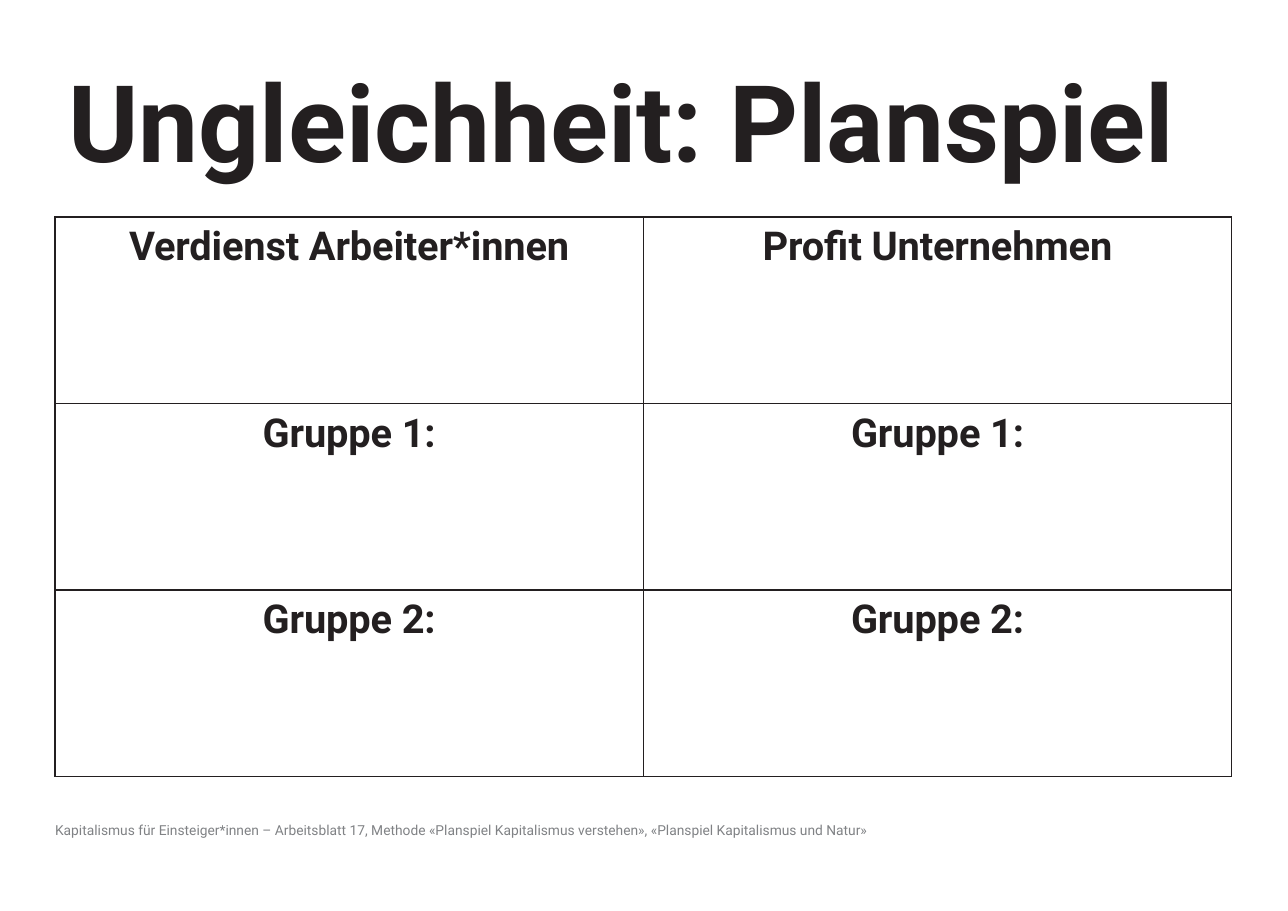
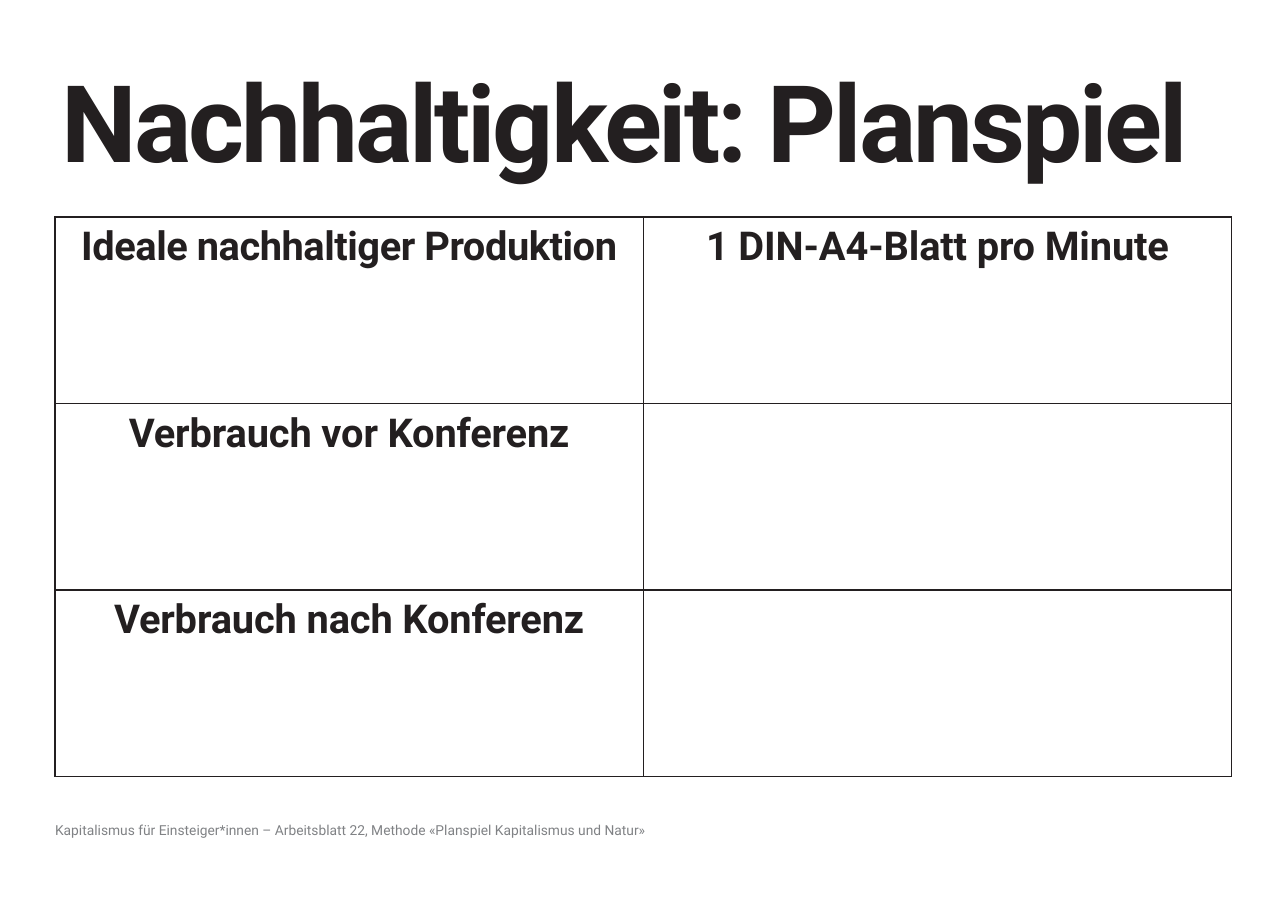
from dataclasses import dataclass

from lxml import etree
from pptx import Presentation, util as u
from pptx.dml.color import RGBColor
from pptx.enum import text
from pptx.oxml.ns import qn


@dataclass(frozen=True)
class Theme:
    font: str = "Roboto"
    ink: str = "231F20"
    grey: str = "808285"
    paper: str = "FFFFFF"
    title: float = 70
    cell: float = 26
    footer: float = 9
    border: float = 1


T = Theme()


def write(tf, words, size, color=T.ink, bold=False, align=text.PP_ALIGN.LEFT,
          before=0, top=0.01, indent=0, spacing=0):
    """Fill a text frame with one formatted paragraph; spacing is in points."""
    tf.margin_left = tf.margin_right = tf.margin_bottom = 0
    tf.margin_top = u.Inches(top)
    tf.word_wrap = True
    tf.vertical_anchor = text.MSO_ANCHOR.TOP
    p = tf.paragraphs[0]
    p.alignment = align
    p.space_before = u.Pt(before)
    p._p.get_or_add_pPr().set("marL", str(u.Inches(indent)))
    r = p.add_run()
    r.text = words
    r.font.name = T.font
    r.font.size = u.Pt(size)
    r.font.bold = bold
    r.font.color.rgb = RGBColor.from_string(color)
    r._r.get_or_add_rPr().set("spc", str(round(spacing * 100)))


def style_cell(cell):
    """Give a cell a plain fill and a thin border on all four sides."""
    cell.fill.solid()
    cell.fill.fore_color.rgb = RGBColor.from_string(T.paper)
    tcPr = cell._tc.get_or_add_tcPr()
    for i, side in enumerate(("lnL", "lnR", "lnT", "lnB")):
        ln = etree.Element(qn(f"a:{side}"), w=str(u.Pt(T.border)))
        fill = etree.SubElement(ln, qn("a:solidFill"))
        etree.SubElement(fill, qn("a:srgbClr"), val=T.ink)
        tcPr.insert(i, ln)


# Content: title, its indent and letter spacing, table rows, footer
SHEETS = [
    ("Ungleichheit: Planspiel", 0.07, 0,
     [("Verdienst Arbeiter*innen", "Profit Unternehmen"),
      ("Gruppe 1:", "Gruppe 1:"),
      ("Gruppe 2:", "Gruppe 2:")],
     "Kapitalismus für Einsteiger*innen – Arbeitsblatt 17, Methode "
     "«Planspiel Kapitalismus verstehen», «Planspiel Kapitalismus und Natur»"),
    ("Nachhaltigkeit: Planspiel", 0.01, -2,
     [("Ideale nachhaltiger Produktion", "1 DIN-A4-Blatt pro Minute"),
      ("Verbrauch vor Konferenz", ""),
      ("Verbrauch nach Konferenz", "")],
     "Kapitalismus für Einsteiger*innen – Arbeitsblatt 22, Methode "
     "«Planspiel Kapitalismus und Natur»"),
]

prs = Presentation()
prs.slide_width, prs.slide_height = u.Inches(11.69), u.Inches(8.27)

for title, indent, spacing, rows, footer in SHEETS:
    s = prs.slides.add_slide(prs.slide_layouts[5])

    # Title
    sp = s.shapes.title
    sp.left, sp.top = u.Inches(0.55), u.Inches(0.49)
    sp.width, sp.height = u.Inches(10.6), u.Inches(1.19)
    sp.text_frame.auto_size = text.MSO_AUTO_SIZE.NONE
    write(sp.text_frame, title, T.title, bold=True, before=1,
          indent=indent, spacing=spacing)

    # Worksheet table
    tbl = s.shapes.add_table(len(rows), 2, u.Inches(0.5), u.Inches(1.97),
                             u.Inches(10.68), u.Inches(5.08)).table
    tbl.first_row = tbl.horz_banding = False
    for row, labels in zip(tbl.rows, rows):
        for cell, label in zip(row.cells, labels):
            style_cell(cell)
            if label:
                cell.margin_left = cell.margin_right = cell.margin_bottom = 0
                cell.margin_top = u.Inches(0.06)
                write(cell.text_frame, label, T.cell, bold=True, before=4.5,
                      top=0.06, align=text.PP_ALIGN.CENTER,
                      spacing=-0.3 if label.startswith("Ideale") else -0.1)

    # Footer
    sp = s.shapes.add_textbox(u.Inches(0.49), u.Inches(7.45),
                              u.Inches(9.44), u.Inches(0.17))
    write(sp.text_frame, footer, T.footer, color=T.grey, before=0.5, indent=0.01)

prs.save("out.pptx")
